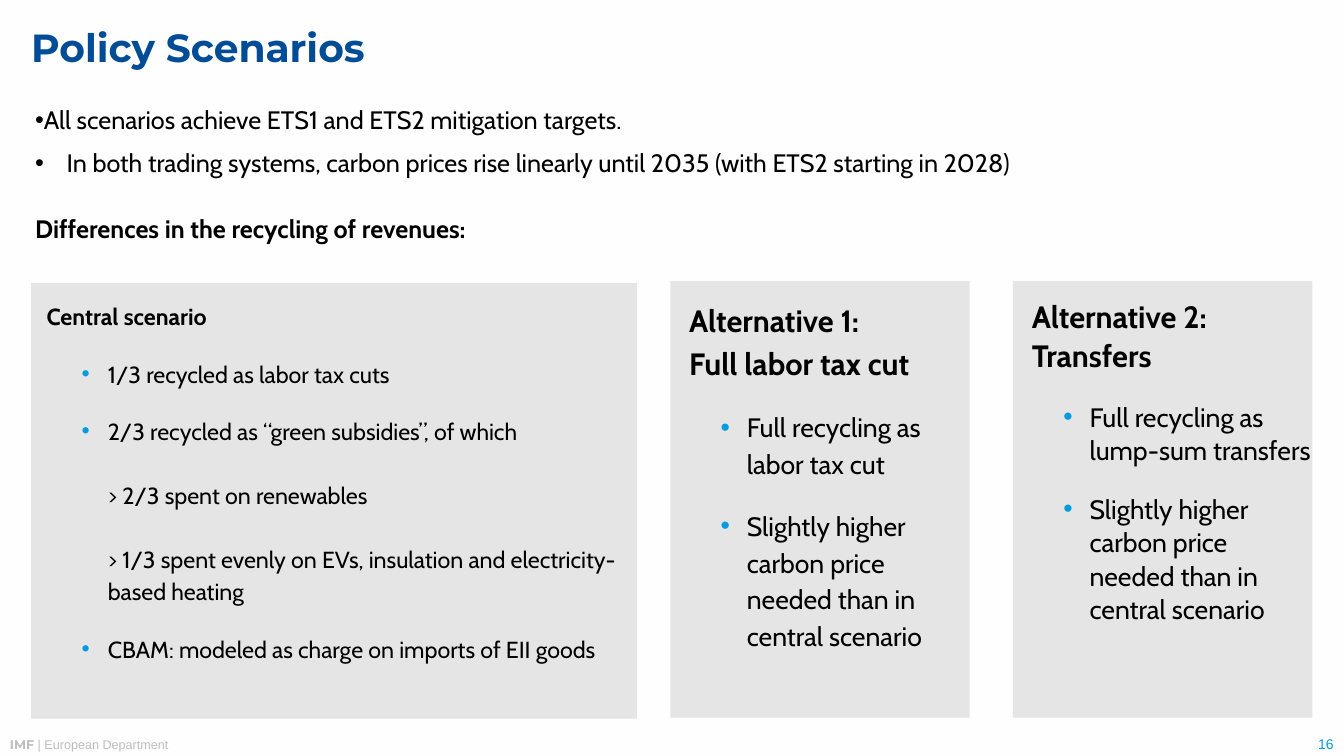
from dataclasses import dataclass, replace
from typing import Optional

from lxml.etree import SubElement
from pptx import Presentation
from pptx.dml.color import RGBColor
from pptx.enum.shapes import MSO_SHAPE as Preset
from pptx.enum.text import MSO_ANCHOR as Anchor, MSO_AUTO_SIZE as AutoSize, PP_ALIGN as Align
from pptx.oxml.ns import qn
from pptx.util import Pt

BACKGROUND = RGBColor(0xFE, 0xFE, 0xFE)
NAVY = RGBColor(0x00, 0x4C, 0x97)
SKY = RGBColor(0x00, 0x9C, 0xDE)
PANEL_GRAY = RGBColor(0xE5, 0xE5, 0xE5)
FOOTER_GRAY = RGBColor(0xBE, 0xBE, 0xBE)
BLACK = RGBColor(0x00, 0x00, 0x00)


@dataclass(frozen=True)
class Style:
    size: float
    font: str = "Cabin"
    color: RGBColor = BLACK
    bold: bool = False
    left: float = 0
    indent: float = 0
    bullet: Optional[RGBColor] = None
    spacing: float = 1.0
    before: float = 0
    after: float = 0
    align: Align = Align.LEFT


@dataclass(frozen=True)
class Entry:
    """One paragraph; its lines are parted by line breaks."""
    style: Style
    lines: tuple[str, ...]


@dataclass(frozen=True)
class Box:
    left: float
    top: float
    width: float
    height: float

    def lengths(self) -> tuple:
        return Pt(self.left), Pt(self.top), Pt(self.width), Pt(self.height)


@dataclass(frozen=True)
class Alternative:
    left: float
    spacing: float
    heading: tuple[str, str]
    points: tuple[str, ...]


TITLE = Style(28, "Montserrat", NAVY, bold=True, spacing=0.9)
INTRO = Style(18, bullet=BLACK, left=22.5, indent=-22.5, spacing=1.15, after=6)
LEAD = Style(18, bold=True, spacing=1.15, after=6)
HEADING = Style(16.6, bold=True, left=11, spacing=1.15, after=12)
POINT = Style(16.6, left=54.7, indent=-18.7, bullet=SKY, spacing=1.15, before=6, after=12)
SUBPOINT = replace(POINT, bullet=None, indent=0, before=11)
ORGANIZATION = Style(9, "Montserrat", FOOTER_GRAY, bold=True)
DEPARTMENT = Style(9, "Arial", FOOTER_GRAY)
PAGE_NUMBER = Style(10, "Arial", SKY, align=Align.RIGHT)

INTRO_ENTRIES = [
    Entry(replace(INTRO, left=0), ("All scenarios achieve ETS1 and ETS2 mitigation targets.",)),
    Entry(INTRO, ("In both trading systems, carbon prices rise linearly until 2035 "
                  "(with ETS2 starting in 2028)",)),
]
CENTRAL_ENTRIES = [
    Entry(HEADING, ("Central scenario",)),
    Entry(POINT, ("1/3 recycled as labor tax cuts",)),
    Entry(POINT, ("2/3 recycled as “green subsidies”, of which",)),
    Entry(SUBPOINT, ("> 2/3 spent on renewables",)),
    Entry(SUBPOINT, ("> 1/3 spent evenly on EVs, insulation and electricity-based heating",)),
    Entry(POINT, ("CBAM: modeled as charge on imports of EII goods",)),
]
HIGHER_PRICE = "Slightly higher carbon price needed than in central scenario"
ALTERNATIVES = [
    Alternative(478.8, 1.15, ("Alternative 1:", "Full labor tax cut"),
                ("Full recycling as labor tax cut", HIGHER_PRICE)),
    Alternative(723.6, 1.05, ("Alternative 2:", "Transfers"),
                ("Full recycling as lump-sum transfers", HIGHER_PRICE)),
]


def add_run(paragraph, text: str, style: Style) -> None:
    run = paragraph.add_run()
    run.text = text
    run.font.name = style.font
    run.font.size = Pt(style.size)
    run.font.bold = style.bold
    run.font.color.rgb = style.color


def format_paragraph(paragraph, style: Style) -> None:
    properties = paragraph._p.get_or_add_pPr()
    properties.set("marL", str(Pt(style.left)))
    properties.set("indent", str(Pt(style.indent)))
    if style.bullet is None:
        SubElement(properties, qn("a:buNone"))
    else:
        color = SubElement(properties, qn("a:buClr"))
        SubElement(color, qn("a:srgbClr"), val=str(style.bullet))
        SubElement(properties, qn("a:buFont"), typeface="Arial")
        SubElement(properties, qn("a:buChar"), char="•")
    paragraph.alignment = style.align
    paragraph.line_spacing = style.spacing
    paragraph.space_before = Pt(style.before)
    paragraph.space_after = Pt(style.after)


def fill_text(shape, entries: list[Entry]) -> None:
    frame = shape.text_frame
    for number, entry in enumerate(entries):
        paragraph = frame.add_paragraph() if number else frame.paragraphs[0]
        format_paragraph(paragraph, entry.style)
        for line_number, line in enumerate(entry.lines):
            if line_number:
                paragraph.add_line_break()
            add_run(paragraph, line, entry.style)


def set_frame(shape, anchor: Anchor, side: float, top: float, bottom: float) -> None:
    frame = shape.text_frame
    frame.word_wrap = True
    frame.auto_size = AutoSize.NONE
    frame.vertical_anchor = anchor
    frame.margin_left = frame.margin_right = Pt(side)
    frame.margin_top, frame.margin_bottom = Pt(top), Pt(bottom)


def place(shape, box: Box) -> None:
    shape.left, shape.top, shape.width, shape.height = box.lengths()


def fill_panel(shape, entries: list[Entry]) -> None:
    shape.fill.solid()
    shape.fill.fore_color.rgb = PANEL_GRAY
    shape.line.fill.background()
    set_frame(shape, Anchor.TOP, 0, 10.8, 0)
    fill_text(shape, entries)


def add_text(slide, box: Box, entries: list[Entry], anchor: Anchor = Anchor.TOP):
    shape = slide.shapes.add_textbox(*box.lengths())
    set_frame(shape, anchor, 7.2, 3.6, 3.6)
    fill_text(shape, entries)
    return shape


def add_alternative(slide, alternative: Alternative) -> None:
    box = Box(alternative.left, 200.9, 213.8, 311.8)
    shape = slide.shapes.add_shape(Preset.RECTANGLE, *box.lengths())
    shape.shadow.inherit = False
    heading = replace(HEADING, size=22, left=13.5, spacing=alternative.spacing)
    point = replace(POINT, size=19, spacing=alternative.spacing)
    fill_panel(shape, [Entry(heading, alternative.heading)]
               + [Entry(point, (text,)) for text in alternative.points])


def main() -> None:
    presentation = Presentation()
    presentation.slide_width, presentation.slide_height = Pt(960), Pt(540)
    slide = presentation.slides.add_slide(presentation.slide_layouts[1])
    slide.background.fill.solid()
    slide.background.fill.fore_color.rgb = BACKGROUND

    title = slide.shapes.title
    place(title, Box(22.3, 2.2, 927.4, 66.2))
    set_frame(title, Anchor.MIDDLE, 0, 0, 0)
    fill_text(title, [Entry(TITLE, ("Policy Scenarios",))])

    central = slide.placeholders[1]
    place(central, Box(22.3, 202.3, 432.7, 311))
    fill_panel(central, CENTRAL_ENTRIES)

    for alternative in ALTERNATIVES:
        add_alternative(slide, alternative)

    add_text(slide, Box(18, 67.7, 921.6, 61.2), INTRO_ENTRIES)
    add_text(slide, Box(18, 145.4, 480, 30.2),
             [Entry(LEAD, ("Differences in the recycling of revenues:",))])

    footer = add_text(slide, Box(0, 522.7, 720, 18), [Entry(ORGANIZATION, ("IMF ",))])
    add_run(footer.text_frame.paragraphs[0], "| European Department", DEPARTMENT)
    add_text(slide, Box(864.7, 521.3, 95, 19.4), [Entry(PAGE_NUMBER, ("16",))], Anchor.BOTTOM)

    presentation.save("out.pptx")


if __name__ == "__main__":
    main()
